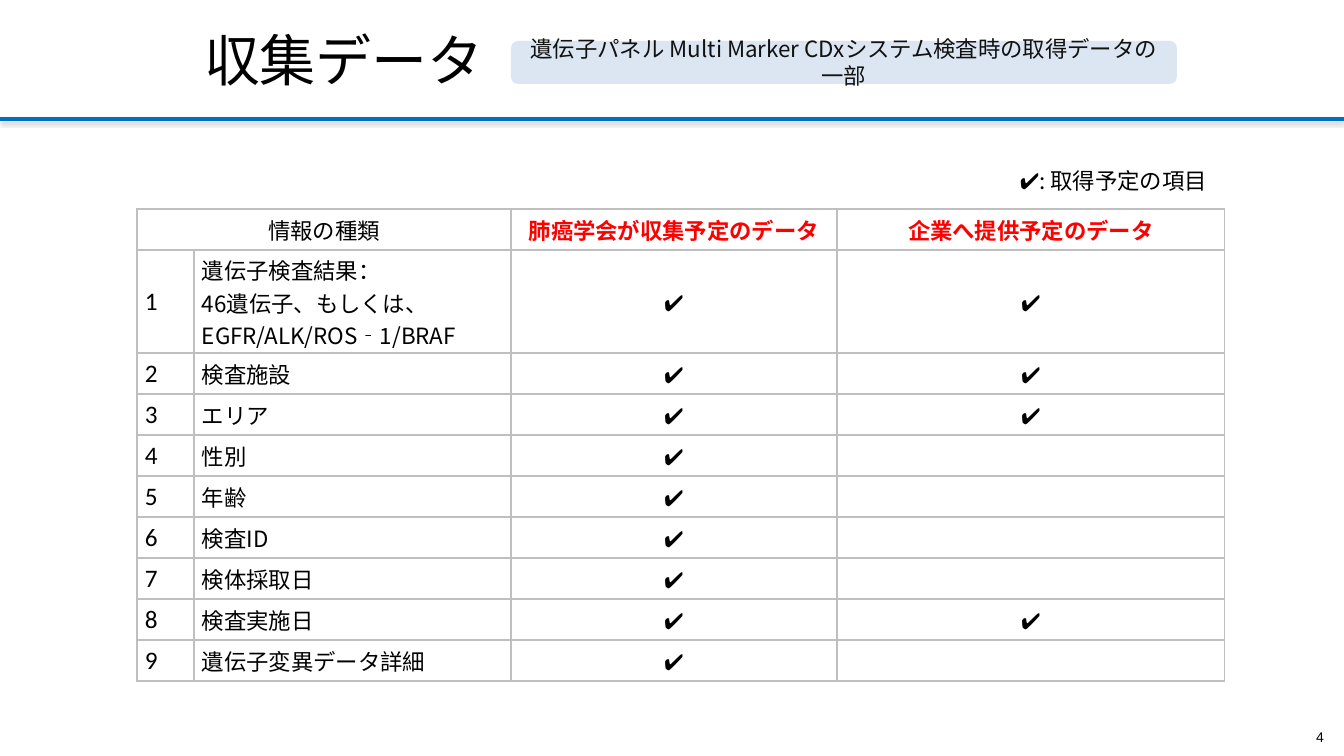
"""Build the slide that lists the collected data items."""
from lxml import etree
from pptx import Presentation
from pptx.dml.color import RGBColor
from pptx.enum.shapes import MSO_CONNECTOR, MSO_SHAPE
from pptx.enum.text import MSO_ANCHOR, PP_ALIGN
from pptx.oxml import parse_xml
from pptx.oxml.ns import nsdecls, qn
from pptx.util import Emu, Pt

LEFT, CENTER, RIGHT = PP_ALIGN.LEFT, PP_ALIGN.CENTER, PP_ALIGN.RIGHT
TOP, MIDDLE, BOTTOM = MSO_ANCHOR.TOP, MSO_ANCHOR.MIDDLE, MSO_ANCHOR.BOTTOM
ROUNDED, STRAIGHT = MSO_SHAPE.ROUNDED_RECTANGLE, MSO_CONNECTOR.STRAIGHT

CJK = "Noto Sans CJK JP"
COLORS = {"text": "000000", "note": "111111", "accent": "FF0000", "pill": "DCE6F2",
          "rule": "0070C0", "border": "BFBFBF", "cell": "FFFFFF"}

TITLE = "収集データ"
SOURCE_NOTE = "遺伝子パネル Multi Marker CDxシステム検査時の取得データの一部"
LEGEND = "✔: 取得予定の項目"
PAGE = "4"
TICK = "✔"
HEADERS = ["情報の種類", "肺癌学会が収集予定のデータ", "企業へ提供予定のデータ"]
ITEMS = [
    ("遺伝子検査結果：\n46遺伝子、もしくは、EGFR/ALK/ROS‐1/BRAF", True, True),
    ("検査施設", True, True),
    ("エリア", True, True),
    ("性別", True, False),
    ("年齢", True, False),
    ("検査ID", True, False),
    ("検体採取日", True, False),
    ("検査実施日", True, True),
    ("遺伝子変異データ詳細", True, False),
]
COLUMN_WIDTHS = [57, 317, 326, 388]
ROW_HEIGHT, TALL_ROW_HEIGHT = 41, 103


def px(n):
    return Emu(round(n * 914400 / 100.8))


def rgb(name):
    return RGBColor.from_string(COLORS[name])


def write(tf, text, size, font=CJK, color="text", align=LEFT, anchor=MIDDLE, bold=False):
    tf.text = text
    tf.vertical_anchor = anchor
    for p in tf.paragraphs:
        p.alignment = align
        p.font.size, p.font.name, p.font.bold = Pt(size), font, bold
        p.font.color.rgb = rgb(color)
        if font == CJK:
            etree.SubElement(p._p.pPr.find(qn("a:defRPr")), qn("a:ea"), typeface=CJK)


def style_cell(cell):
    cell.margin_left = cell.margin_right = px(8)
    cell.margin_top = cell.margin_bottom = px(4)
    for side in ("L", "R", "T", "B"):
        cell._tc.get_or_add_tcPr().append(parse_xml(
            f'<a:ln{side} {nsdecls("a")} w="12700"><a:solidFill>'
            f'<a:srgbClr val="{COLORS["border"]}"/></a:solidFill></a:ln{side}>'))
    cell.fill.solid()
    cell.fill.fore_color.rgb = rgb("cell")


def add_text(s, box, text, size, wrap=True, **style):
    tf = s.shapes.add_textbox(*map(px, box)).text_frame
    tf.word_wrap = wrap
    write(tf, text, size, **style)
    return tf


def add_data_table(s):
    heights = [ROW_HEIGHT, TALL_ROW_HEIGHT] + [ROW_HEIGHT] * (len(ITEMS) - 1)
    table = s.shapes.add_table(len(heights), len(COLUMN_WIDTHS), px(137), px(209),
                               px(sum(COLUMN_WIDTHS)), px(sum(heights))).table
    table.first_row = table.horz_banding = False
    for column, width in zip(table.columns, COLUMN_WIDTHS):
        column.width = px(width)
    for row, height in zip(table.rows, heights):
        row.height = px(height)
    for cell in table.iter_cells():
        style_cell(cell)
    table.cell(0, 0).merge(table.cell(0, 1))
    for col, header in zip((0, 2, 3), HEADERS):
        write(table.cell(0, col).text_frame, header, 16, align=CENTER,
              color="accent" if col else "text", bold=col > 0)
        table.cell(0, col).vertical_anchor = MIDDLE
    for i, (item, *ticks) in enumerate(ITEMS, 1):
        write(table.cell(i, 0).text_frame, str(i), 18, font="Calibri")
        write(table.cell(i, 1).text_frame, item, 16)
        for col, ticked in enumerate(ticks, 2):
            if ticked:
                write(table.cell(i, col).text_frame, TICK, 16, align=CENTER)
        for col in range(len(COLUMN_WIDTHS)):
            table.cell(i, col).vertical_anchor = MIDDLE


def add_rule(s):
    line = s.shapes.add_connector(STRAIGHT, 0, px(119), px(1344), px(119))
    line.line.color.rgb = rgb("rule")
    line.line.width = Pt(2.25)
    line._element.spPr.append(parse_xml(
        f'<a:effectLst {nsdecls("a")}><a:outerShdw blurRad="39370" dist="20320" dir="5400000" '
        f'rotWithShape="0"><a:srgbClr val="{COLORS["text"]}"><a:alpha val="38000"/></a:srgbClr>'
        '</a:outerShdw></a:effectLst>'))


def main():
    prs = Presentation()
    prs.slide_width, prs.slide_height = px(1344), px(756)
    s = prs.slides.add_slide(prs.slide_layouts[5])

    number = add_text(s, (1307, 720, 17, 33), PAGE, 10, wrap=False, font="Arial", align=RIGHT)
    number.margin_left = number.margin_right = 0

    title = s.shapes.title
    title.left, title.top, title.width, title.height = map(px, (194, 20, 816, 47))
    write(title.text_frame, TITLE, 40, font="Arial", anchor=TOP)

    pill = s.shapes.add_shape(ROUNDED, *map(px, (511, 41, 666, 43)))
    pill.shadow.inherit = False
    pill.fill.solid()
    pill.fill.fore_color.rgb = rgb("pill")
    pill.line.fill.background()
    write(pill.text_frame, SOURCE_NOTE, 16, color="note", align=CENTER)

    add_text(s, (1010, 162, 235, 37), LEGEND, 16, anchor=BOTTOM)
    add_data_table(s)
    add_rule(s)
    prs.save("out.pptx")


if __name__ == "__main__":
    main()
